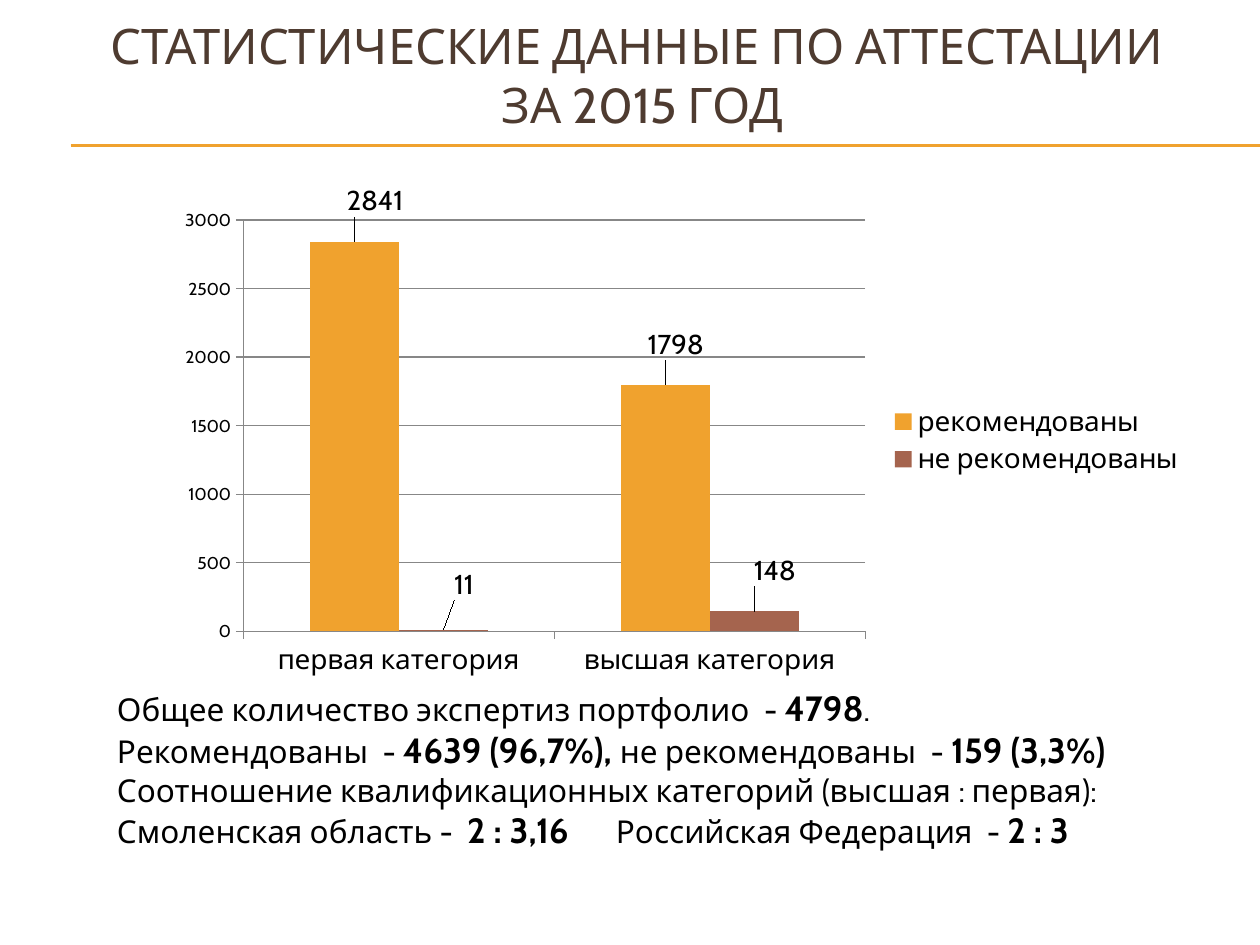
from lxml.etree import SubElement
from pptx import Presentation
from pptx.chart.data import CategoryChartData
from pptx.dml.color import RGBColor
from pptx.enum.chart import XL_CHART_TYPE, XL_LABEL_POSITION, XL_LEGEND_POSITION, XL_TICK_MARK
from pptx.enum.shapes import MSO_CONNECTOR
from pptx.enum.text import MSO_ANCHOR, PP_ALIGN
from pptx.oxml.ns import qn
from pptx.util import Inches, Pt

FONT = "Cabin"
BLACK = RGBColor(0x00, 0x00, 0x00)
BROWN = RGBColor(0x4E, 0x3B, 0x30)
ORANGE = RGBColor(0xF0, 0xA2, 0x2E)
RUST = RGBColor(0xA5, 0x64, 0x4E)
GRAY = RGBColor(0x87, 0x87, 0x87)

TITLE = [[("СТАТИСТИЧЕСКИЕ ДАННЫЕ ПО АТТЕСТАЦИИ \vЗА 2015 ГОД", False)]]
CATEGORIES = ["первая категория", "высшая категория"]
# name, values, colour, label shifts as fractions of the chart
SERIES = [
    ("рекомендованы", (2841, 1798), ORANGE, [(0.02, -0.04), (0.01, -0.04)]),
    ("не рекомендованы", (11, 148), RUST, [(0.02, -0.05), (0.02, -0.04)]),
]
PLOT_AREA = {"x": 0.077, "y": 0.05, "w": 0.602, "h": 0.84}
# paragraphs of (text, is a key figure)
SUMMARY = [
    [("Общее количество экспертиз портфолио  - ", False), ("4798", True), (".", False)],
    [("Рекомендованы  - ", False), ("4639 (96,7%), ", True),
     ("не рекомендованы  - ", False), ("159 (3,3%)", True)],
    [("Соотношение квалификационных категорий (высшая : первая):", False)],
    [("Смоленская область -  ", False), ("2 : 3,16\t", True),
     ("Российская Федерация  - ", False), ("2 : 3", True)],
]


def add_text(slide, paragraphs, box, size, color=BLACK, key_size=None,
             align=PP_ALIGN.LEFT, anchor=MSO_ANCHOR.TOP, tab=None):
    frame = slide.shapes.add_textbox(*map(Inches, box)).text_frame
    frame.word_wrap = True
    frame.vertical_anchor = anchor
    for index, parts in enumerate(paragraphs):
        paragraph = frame.paragraphs[0] if index == 0 else frame.add_paragraph()
        paragraph.alignment = align
        if tab:
            stops = SubElement(paragraph._p.get_or_add_pPr(), qn("a:tabLst"))
            SubElement(stops, qn("a:tab"), pos=str(Inches(tab)), algn="l")
        for text, is_key in parts:
            for number, line in enumerate(text.split("\v")):
                if number:
                    paragraph.add_line_break()
                run = paragraph.add_run()
                run.text = line
                style_font(run.font, key_size if is_key else size, color, is_key)


def style_font(font, size, color=BLACK, bold=False):
    font.name, font.size, font.bold = FONT, Pt(size), bold
    font.color.rgb = color


def add_rule(slide, y):
    rule = slide.shapes.add_connector(
        MSO_CONNECTOR.STRAIGHT, Inches(0.56), Inches(y), Inches(10), Inches(y))
    rule.line.color.rgb = ORANGE
    rule.line.width = Pt(0.75)
    SubElement(rule._element.spPr, qn("a:effectLst"))


def set_layout(parent, position, values):
    """Give a chart part a manual layout, placed at an index in its parent."""
    for old in parent.findall(qn("c:layout")):
        parent.remove(old)
    layout = SubElement(parent, qn("c:layout"))
    parent.insert(position, layout)
    manual = SubElement(layout, qn("c:manualLayout"))
    for tag, value in values.items():
        SubElement(manual, qn(f"c:{tag}"), val=str(value))


def add_results_chart(slide):
    data = CategoryChartData()
    data.categories = CATEGORIES
    for name, values, _, _ in SERIES:
        data.add_series(name, values)
    box = map(Inches, (1.3, 1.47, 8.2, 3.97))
    chart = slide.shapes.add_chart(XL_CHART_TYPE.COLUMN_CLUSTERED, *box, data).chart
    style_font(chart.font, 10)
    chart.has_title = False
    chart.has_legend = True
    chart.legend.position = XL_LEGEND_POSITION.RIGHT
    chart.legend.include_in_layout = False
    style_font(chart.legend.font, 16)

    for axis, size in ((chart.category_axis, 16), (chart.value_axis, 10)):
        style_font(axis.tick_labels.font, size)
        axis.major_tick_mark = XL_TICK_MARK.OUTSIDE
        axis.format.line.color.rgb = GRAY
    chart.value_axis.minimum_scale = 0
    chart.value_axis.maximum_scale = 3000
    chart.value_axis.major_unit = 500
    chart.value_axis.major_gridlines.format.line.color.rgb = GRAY

    plot = chart.plots[0]
    plot.gap_width = 150
    plot.overlap = 0
    plot.vary_by_categories = False
    for series, (_, _, color, shifts) in zip(plot.series, SERIES):
        series.format.fill.solid()
        series.format.fill.fore_color.rgb = color
        series.data_labels.show_value = True
        style_font(series.data_labels.font, 16)
        for index, shift in enumerate(shifts):
            label = series.points[index].data_label
            style_font(label.font, 16)
            label.position = XL_LABEL_POSITION.OUTSIDE_END
        for label, shift in zip(series._element.iter(qn("c:dLbl")), shifts):
            set_layout(label, 1, dict(zip("xy", shift)))

    plot_area = chart._chartSpace.chart.plotArea
    modes = {"layoutTarget": "inner", "xMode": "edge", "yMode": "edge"}
    set_layout(plot_area, 0, {**modes, **PLOT_AREA})


def main():
    deck = Presentation()
    deck.slide_width, deck.slide_height = Inches(10), Inches(7.5)
    slide = deck.slides.add_slide(deck.slide_layouts[6])
    for y in (1.15, 1.16):
        add_rule(slide, y)
    add_text(slide, TITLE, (0.35, 0.13, 9.5, 0.92), 28, color=BROWN,
             align=PP_ALIGN.CENTER, anchor=MSO_ANCHOR.MIDDLE)
    add_results_chart(slide)
    add_text(slide, SUMMARY, (0.83, 5.4, 8.11, 1.41), 18, key_size=20, tab=3.96)
    deck.save("out.pptx")


if __name__ == "__main__":
    main()
